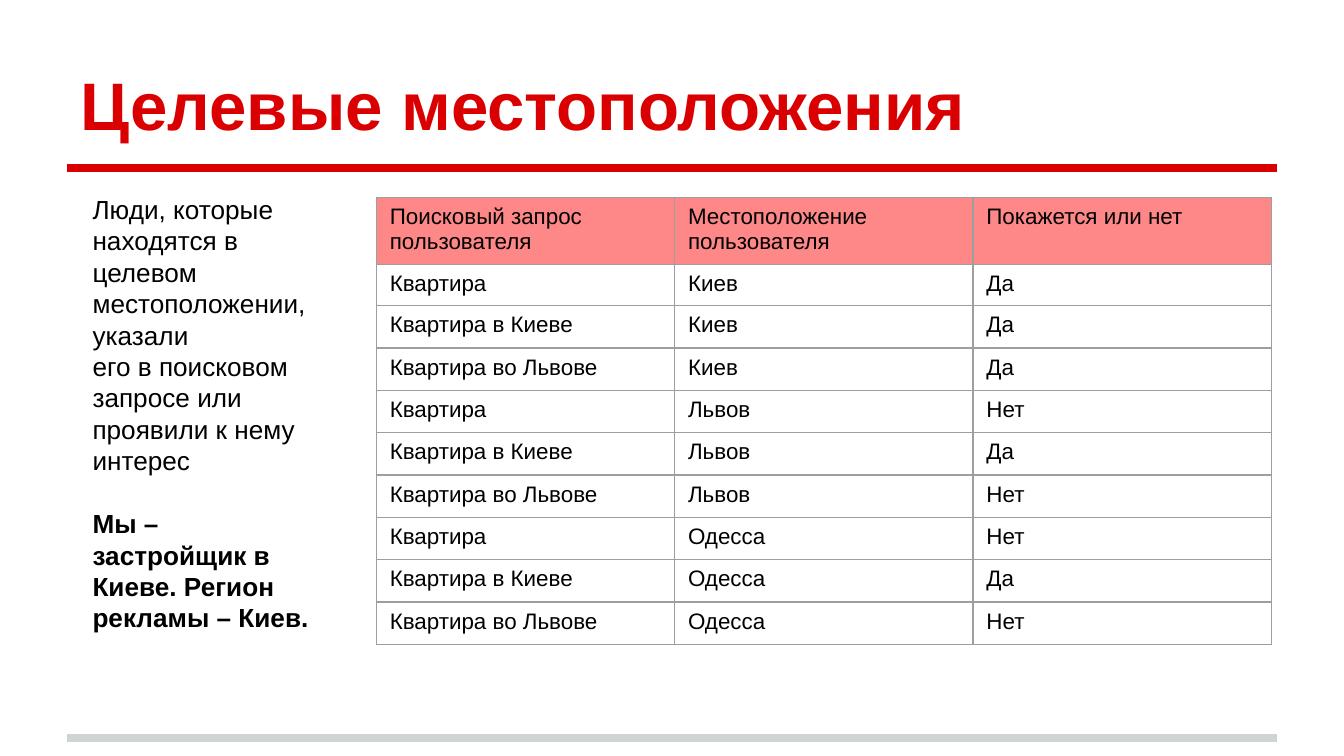
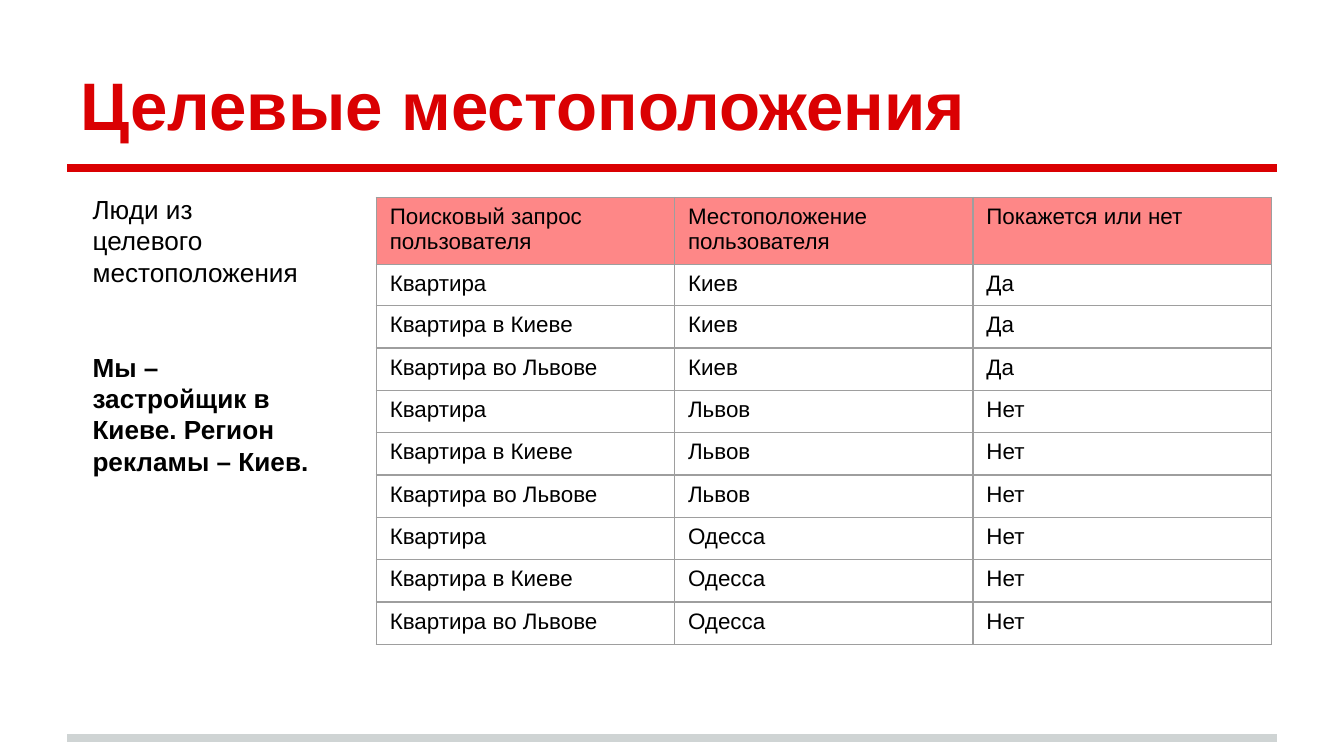
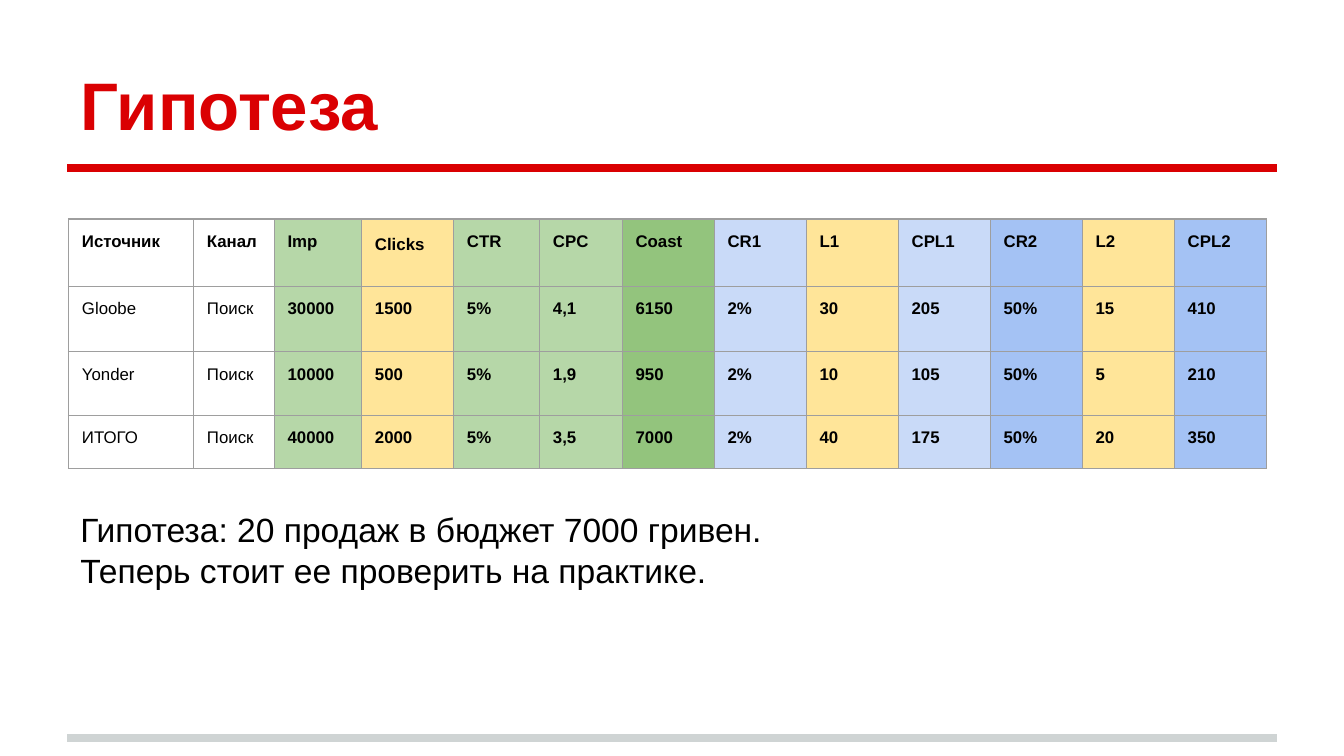
from itertools import product

from lxml.etree import SubElement
from pptx import Presentation
from pptx.dml.color import RGBColor
from pptx.enum.shapes import MSO_CONNECTOR
from pptx.enum.text import MSO_ANCHOR, MSO_AUTO_SIZE
from pptx.oxml.ns import qn
from pptx.util import Emu, Pt

PX = 4572  # 200 px to the inch
FONT = "Arial"
COLORS = {
    "red": "DA0002", "footer": "CFD4D4", "text": "000000", "border": "9E9E9E",
    "pink": "FE8787", "green": "B6D7A8", "dark_green": "93C47D",
    "yellow": "FFE599", "pale_blue": "C9DAF8", "blue": "A4C2F4",
}
BORDER_WIDTH = Pt(0.75)
INSET = 20

TITLE_BOX = (100, 46, 1800, 188)
TITLE_RULE_TOP, FOOTER_TOP = 250, 1098
RULE_LEFT, RULE_RIGHT = 100, 1900

TITLE = {"size": 36, "bold": True, "color": "red"}
SIDE_TEXT = {"size": 14}
SIDE_STRONG = {"size": 14, "bold": True}
BODY = {"size": 18}
QUERY_CELL = {"size": 12}
FUNNEL_CELL = {"size": 9}
SIDE_LINE = 17  # points

TARGET_TITLE = "Целевые местоположения"
ADVERTISER = "Мы – застройщик в Киеве. Регион рекламы – Киев."
QUERY_HEADER = ["Поисковый запрос пользователя", "Местоположение пользователя",
                "Покажется или нет"]
QUERIES = ["Квартира", "Квартира в Киеве", "Квартира во Львове"]
CITIES = ["Киев", "Львов", "Одесса"]
QUERY_ROWS = [82, 61] + [63] * 8

TARGETINGS = [
    {"audience": "Люди, которые находятся в целевом местоположении, указали \n"
                 "его в поисковом запросе или проявили к нему интерес",
     "box": (118, 278, 362, 680), "gap_lines": 1,
     "shown": {("Киев", query) for query in QUERIES}
              | {(city, "Квартира в Киеве") for city in CITIES}},
    {"audience": "Люди из целевого местоположения",
     "box": (118, 278, 362, 444), "gap_lines": 2,
     "shown": {("Киев", query) for query in QUERIES}},
]

# heading, width, fill
FUNNEL_COLUMNS = [
    ("Источник", 186, None), ("Канал", 120, None), ("Imp", 130, "green"),
    ("Сlicks", 137, "yellow"), ("CTR", 128, "green"), ("CPC", 123, "green"),
    ("Coast", 137, "dark_green"), ("CR1", 137, "pale_blue"),
    ("L1", 137, "yellow"), ("CPL1", 137, "pale_blue"), ("CR2", 137, "blue"),
    ("L2", 137, "yellow"), ("CPL2", 137, "blue"),
]
FUNNEL_ROWS = [100, 97, 95, 79]
FUNNEL_DATA = [
    ["Gloobe", "Поиск", "30000", "1500", "5%", "4,1", "6150", "2%", "30", "205",
     "50%", "15", "410"],
    ["Yonder", "Поиск", "10000", "500", "5%", "1,9", "950", "2%", "10", "105",
     "50%", "5", "210"],
    ["ИТОГО", "Поиск", "40000", "2000", "5%", "3,5", "7000", "2%", "40", "175",
     "50%", "20", "350"],
]
HYPOTHESIS = ["Гипотеза: 20 продаж в бюджет 7000 гривен.",
              "Теперь стоит ее проверить на практике."]


def rgb(name):
    return RGBColor.from_string(COLORS[name])


def px(*lengths):
    return [Emu(length * PX) for length in lengths]


def write(para, text, size, bold=False, color="text"):
    para.text = text
    for span in para.runs:
        for name, value in {"name": FONT, "size": Pt(size), "bold": bold}.items():
            setattr(span.font, name, value)
        span.font.color.rgb = rgb(color)


def set_insets(target, vertical):
    insets = {"left": INSET, "right": INSET, "top": vertical, "bottom": vertical}
    for side, length in insets.items():
        setattr(target, f"margin_{side}", Emu(length * PX))


def add_text(page, box, lines, vertical_inset=INSET, **frame_format):
    """Place (text, format) lines, one paragraph each, in a wrapping box."""
    frame = page.shapes.add_textbox(*px(*box)).text_frame
    set_insets(frame, vertical_inset)
    for name, value in {"word_wrap": True, **frame_format}.items():
        setattr(frame, name, value)
    for index, (text, text_format) in enumerate(lines):
        para = frame.add_paragraph() if index else frame.paragraphs[0]
        write(para, text, **text_format)
    return frame


def add_rule(page, top, color):
    rule = page.shapes.add_connector(
        MSO_CONNECTOR.STRAIGHT, *px(RULE_LEFT, top, RULE_RIGHT, top))
    rule.line.color.rgb = rgb(color)
    rule.line.width = Pt(4)
    SubElement(rule._element.spPr, qn("a:effectLst"))


def add_page(deck, title):
    page = deck.slides.add_slide(deck.slide_layouts[6])
    add_rule(page, FOOTER_TOP, "footer")
    add_rule(page, TITLE_RULE_TOP, "red")
    add_text(page, TITLE_BOX, [(title, TITLE)], vertical_anchor=MSO_ANCHOR.BOTTOM)
    return page


def style_cell(cell, fill):
    properties = cell._tc.get_or_add_tcPr()
    for side in ("lnL", "lnR", "lnT", "lnB"):
        line = SubElement(properties, qn(f"a:{side}"), w=str(BORDER_WIDTH))
        solid = SubElement(line, qn("a:solidFill"))
        SubElement(solid, qn("a:srgbClr"), val=COLORS["border"])
    if fill:
        cell.fill.solid()
        cell.fill.fore_color.rgb = rgb(fill)
    else:
        cell.fill.background()


def add_grid(page, corner, widths, heights, rows, vertical_inset, cell_look):
    """Build a table; cell_look(row, column) gives a cell's fill and text format."""
    box = (*corner, sum(widths), sum(heights))
    table = page.shapes.add_table(len(rows), len(widths), *px(*box)).table
    table.first_row = table.horz_banding = False
    for column, width in zip(table.columns, px(*widths)):
        column.width = width
    for row, height in zip(table.rows, px(*heights)):
        row.height = height
    for r, c in product(range(len(rows)), range(len(widths))):
        cell = table.cell(r, c)
        fill, text_format = cell_look(r, c)
        style_cell(cell, fill)
        set_insets(cell, vertical_inset)
        write(cell.text_frame.paragraphs[0], rows[r][c], **text_format)
    return table


def add_targeting_page(deck, audience, box, gap_lines, shown):
    page = add_page(deck, TARGET_TITLE)
    rows = [QUERY_HEADER] + [
        [query, city, "Да" if (city, query) in shown else "Нет"]
        for city, query in product(CITIES, QUERIES)]
    add_grid(page, (560, 294), [444] * 3, QUERY_ROWS, rows, INSET // 2,
             lambda r, c: (None if r else "pink", QUERY_CELL))
    frame = add_text(page, box, [(audience, SIDE_TEXT), (ADVERTISER, SIDE_STRONG)],
                     INSET // 2, auto_size=MSO_AUTO_SIZE.SHAPE_TO_FIT_TEXT)
    frame.paragraphs[1].space_before = Pt(SIDE_LINE * gap_lines)


def add_hypothesis_page(deck):
    page = add_page(deck, "Гипотеза")
    add_text(page, (100, 738, 1800, 250), [(line, BODY) for line in HYPOTHESIS])
    headings, widths, fills = zip(*FUNNEL_COLUMNS)
    table = add_grid(
        page, (102, 326), widths, FUNNEL_ROWS, [headings] + FUNNEL_DATA, INSET,
        lambda r, c: (fills[c], {**FUNNEL_CELL, "bold": r == 0 or c > 1}))
    clicks = table.cell(0, headings.index("Сlicks"))
    clicks.text_frame.paragraphs[0].line_spacing = 1.15


def main():
    deck = Presentation()
    deck.slide_width, deck.slide_height = px(2000, 1125)
    for targeting in TARGETINGS:
        add_targeting_page(deck, **targeting)
    add_hypothesis_page(deck)
    deck.save("out.pptx")


if __name__ == "__main__":
    main()
